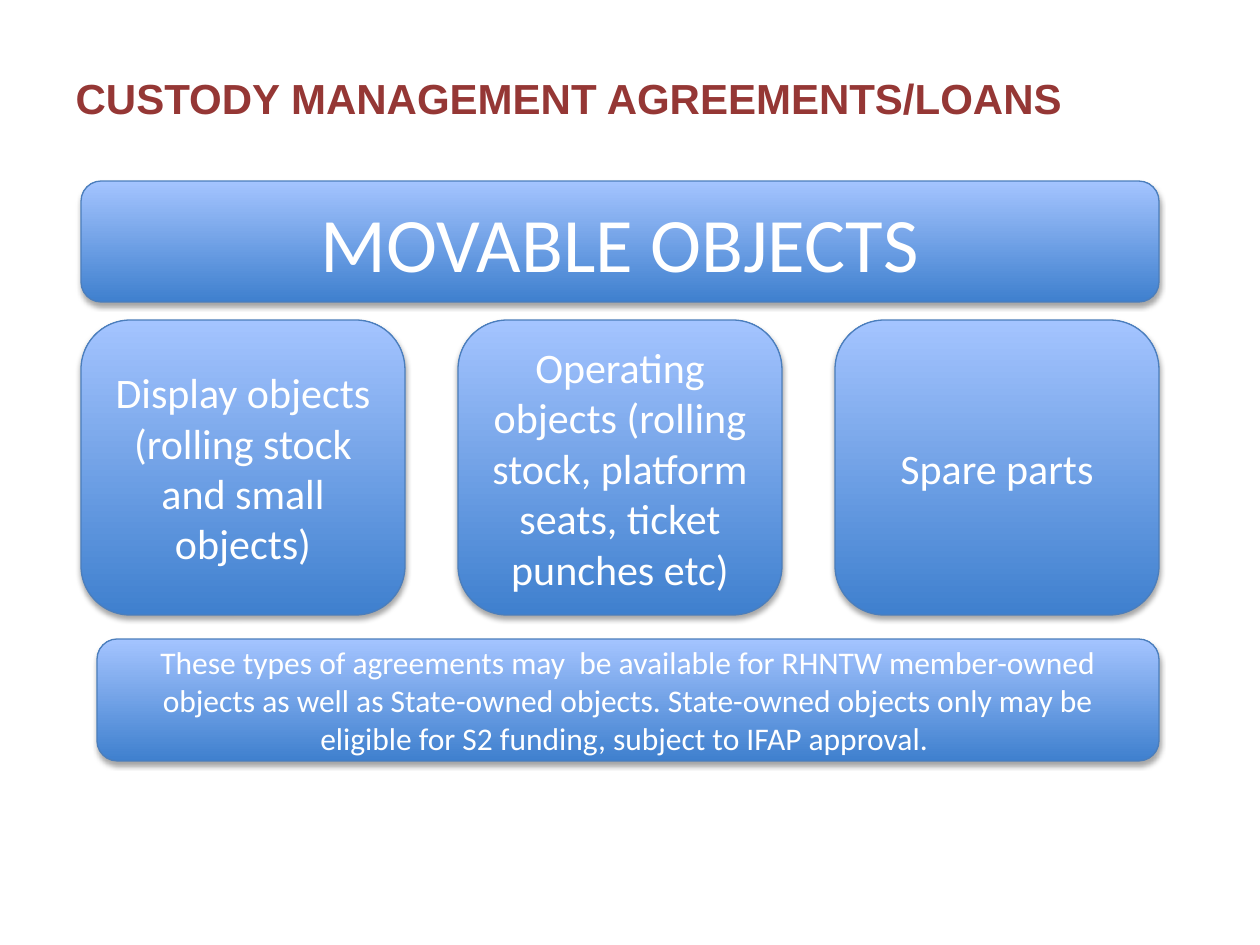
from dataclasses import dataclass
from lxml import etree
from pptx import Presentation
from pptx import util as u
from pptx.dml import color
from pptx.enum import shapes, text
from pptx.oxml import ns

SCALE = 914400 / 126


@dataclass(frozen=True)
class Theme:
    title: str = "953735"
    low: str = "3F80CE"
    high: str = "A4C4FF"
    edge: str = "4B7EBC"
    white: str = "FFFFFF"
    shade: str = "000000"
    head: str = "Arial"
    body: str = "Calibri"
    huge: int = 44
    large: int = 24
    small: int = 18


def px(n):
    return u.Emu(round(n * SCALE))


def rgb(code):
    return color.RGBColor.from_string(code)


def write(frame, words, *, font, size, tint, bold=False, align=text.PP_ALIGN.CENTER):
    frame.word_wrap = True
    frame.auto_size = text.MSO_AUTO_SIZE.NONE
    frame.vertical_anchor = text.MSO_ANCHOR.MIDDLE
    para = frame.paragraphs[0]
    para.alignment = align
    run = para.add_run()
    run.text = words
    run.font.name = font
    run.font.size = u.Pt(size)
    run.font.bold = bold
    run.font.color.rgb = rgb(tint)


class Deck:
    def __init__(self, theme):
        self.theme = theme
        self.show = Presentation()
        self.show.slide_width = px(1260)
        self.show.slide_height = px(945)
        self.slide = self.show.slides.add_slide(self.show.slide_layouts[5])

    def title(self, words, x, y, w, h):
        t = self.theme
        box = self.slide.shapes.title
        box.left, box.top, box.width, box.height = map(px, (x, y, w, h))
        write(box.text_frame, words, font=t.head, size=t.large, tint=t.title,
              bold=True, align=text.PP_ALIGN.LEFT)

    def panel(self, words, x, y, w, h, size):
        t = self.theme
        box = self.slide.shapes.add_shape(
            shapes.MSO_SHAPE.ROUNDED_RECTANGLE, *map(px, (x, y, w, h)))
        box.fill.gradient()
        box.fill.gradient_angle = 90
        for stop, tint in zip(box.fill.gradient_stops, (t.low, t.high)):
            stop.color.rgb = rgb(tint)
        box.line.color.rgb = rgb(t.edge)
        box.line.width = u.Pt(0.75)
        self.shadow(box)
        write(box.text_frame, words, font=t.body, size=size, tint=t.white)

    def shadow(self, box):
        box.shadow.inherit = False
        holder = box.element.spPr.find(ns.qn("a:effectLst"))
        cast = etree.SubElement(
            holder, ns.qn("a:outerShdw"), blurRad=str(u.Pt(3.1)),
            dist=str(u.Pt(1.8)), dir="5400000", rotWithShape="0")
        tint = etree.SubElement(cast, ns.qn("a:srgbClr"), val=self.theme.shade)
        etree.SubElement(tint, ns.qn("a:alpha"), val="35000")

    def save(self):
        self.show.save("out.pptx")


def main():
    theme = Theme()
    deck = Deck(theme)
    deck.title("CUSTODY MANAGEMENT AGREEMENTS/LOANS", 63, 38, 1134, 120)

    left, width, card = 81, 1078, 324
    deck.panel("MOVABLE OBJECTS", left, 181, width, 121, theme.huge)

    kinds = (
        "Display objects (rolling stock and small objects)",
        "Operating objects (rolling stock, platform seats, ticket punches etc)",
        "Spare parts",
    )
    step = (width - card) // (len(kinds) - 1)
    for i, kind in enumerate(kinds):
        deck.panel(kind, left + i * step, 320, card, 295, theme.large)

    deck.panel(
        "These types of agreements may  be available for RHNTW member-owned "
        "objects as well as State-owned objects. State-owned objects only may be "
        "eligible for S2 funding, subject to IFAP approval. ",
        97, 639, 1062, 122, theme.small)
    deck.save()


if __name__ == "__main__":
    main()
